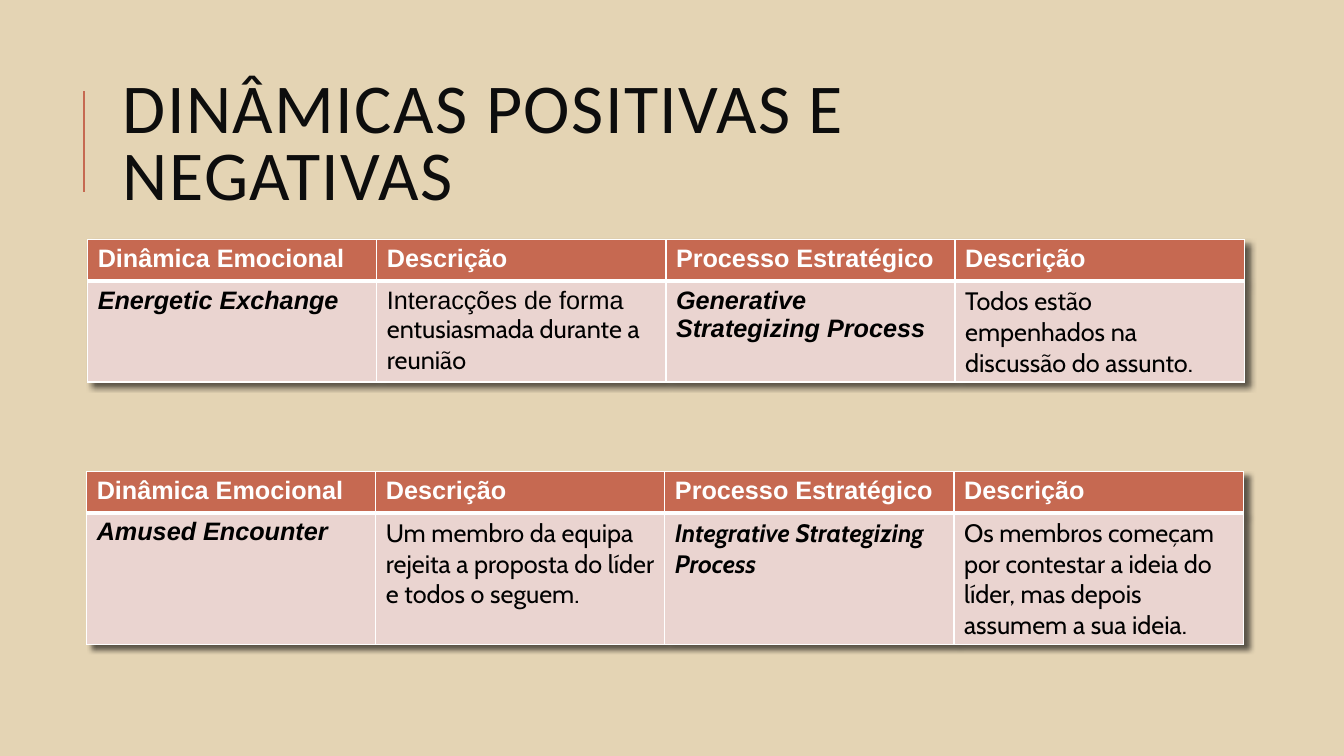
"""Build the slide on positive and negative dynamics."""
from dataclasses import dataclass

import lxml.etree
import pptx
import pptx.dml.color
import pptx.enum.shapes
import pptx.enum.text
import pptx.oxml
import pptx.util

Inches = pptx.util.Inches
Pt = pptx.util.Pt
NS = 'xmlns:a="http://schemas.openxmlformats.org/drawingml/2006/main"'
RUST, ROSE, WHITE, BLACK = "C66951", "EAD4D0", "FFFFFF", "000000"
HEADS = ["Dinâmica Emocional", "Descrição", "Processo Estratégico", "Descrição"]


@dataclass
class Cell:
    runs: list[tuple[str, str]]
    strong: bool = False


@dataclass
class Grid:
    left: float
    top: float
    depth: float
    cells: list[Cell]


GRIDS = [
    Grid(0.87, 2.38, 1.0, [
        Cell([("Energetic Exchange", "Arial")], True),
        Cell([("Interacções de forma ", "Arial"),
              ("entusiasmada durante a reunião", "Cabin")]),
        Cell([("Generative Strategizing Process", "Arial")], True),
        Cell([("Todos estão empenhados na discussão do assunto.", "Cabin")]),
    ]),
    Grid(0.86, 4.68, 1.3, [
        Cell([("Amused Encounter", "Arial")], True),
        Cell([("Um membro da equipa rejeita a proposta do líder "
               "e todos o seguem.", "Cabin")]),
        Cell([("Integrative Strategizing Process", "Cabin")], True),
        Cell([("Os membros começam por contestar a ideia do líder, "
               "mas depois assumem a sua ideia.", "Cabin")]),
    ]),
]


def color(code: str) -> pptx.dml.color.RGBColor:
    return pptx.dml.color.RGBColor.from_string(code)


def add_xml(parent, markup: str, spot: int) -> None:
    parent.insert(spot, pptx.oxml.parse_xml(markup))


def draw_title(slide) -> None:
    x = Inches(0.83)
    bar = slide.shapes.add_connector(
        pptx.enum.shapes.MSO_CONNECTOR.STRAIGHT, x, Inches(1.9), x, Inches(0.9))
    bar.line.color.rgb = color(RUST)
    bar.line.width = Pt(1.5)
    props = bar._element.spPr
    add_xml(props, f"<a:effectLst {NS}/>", len(props))

    box = slide.shapes.add_textbox(
        Inches(1.12), Inches(0.64), Inches(10.63), Inches(1.64))
    frame = box.text_frame
    frame.word_wrap = True
    frame.vertical_anchor = pptx.enum.text.MSO_ANCHOR.MIDDLE
    para = frame.paragraphs[0]
    para.line_spacing = 0.8
    run = para.add_run()
    run.text = "DINÂMICAS POSITIVAS E NEGATIVAS"
    para.font.name = "Calibri"
    para.font.size = Pt(50)
    para.font.color.rgb = color("0D0D0D")
    run._r.get_or_add_rPr().set("spc", "100")


def fill_cell(spot, cell: Cell, head: bool) -> None:
    props = spot._tc.get_or_add_tcPr()
    for side in "LRTB":
        width = 3 if (head and side == "B") or (not head and side == "T") else 1
        add_xml(props, f'<a:ln{side} {NS} w="{Pt(width)}"><a:solidFill>'
                f'<a:srgbClr val="{WHITE}"/></a:solidFill></a:ln{side}>', len(props))
    spot.fill.solid()
    spot.fill.fore_color.rgb = color(RUST if head else ROSE)
    para = spot.text_frame.paragraphs[0]
    for text, face in cell.runs:
        run = para.add_run()
        run.text = text
        run.font.name = face
    para.font.size = Pt(18)
    para.font.bold = head or cell.strong
    para.font.italic = cell.strong and not head
    para.font.color.rgb = color(WHITE if head else BLACK)


def draw_grid(slide, grid: Grid) -> None:
    table = slide.shapes.add_table(
        2, len(HEADS), Inches(grid.left), Inches(grid.top),
        Inches(11.47), Inches(0.41 + grid.depth)).table
    table.rows[0].height = Inches(0.41)
    table.rows[1].height = Inches(grid.depth)
    add_xml(table._tbl.tblPr,
            f'<a:effectLst {NS}><a:outerShdw blurRad="50800" dist="50800" '
            'dir="2700000" algn="tl" rotWithShape="0"><a:srgbClr val="000000">'
            '<a:alpha val="60000"/></a:srgbClr></a:outerShdw></a:effectLst>', 0)
    heads = [Cell([(text, "Arial")]) for text in HEADS]
    for row, cells in enumerate([heads, grid.cells]):
        for col, cell in enumerate(cells):
            fill_cell(table.cell(row, col), cell, row == 0)


def main() -> None:
    deck = pptx.Presentation()
    deck.slide_width, deck.slide_height = Inches(13.33), Inches(7.5)
    slide = deck.slides.add_slide(deck.slide_layouts[6])
    slide.background.fill.solid()
    slide.background.fill.fore_color.rgb = color("E4D4B4")
    draw_title(slide)
    for grid in GRIDS:
        draw_grid(slide, grid)
    deck.save("out.pptx")


if __name__ == "__main__":
    main()
